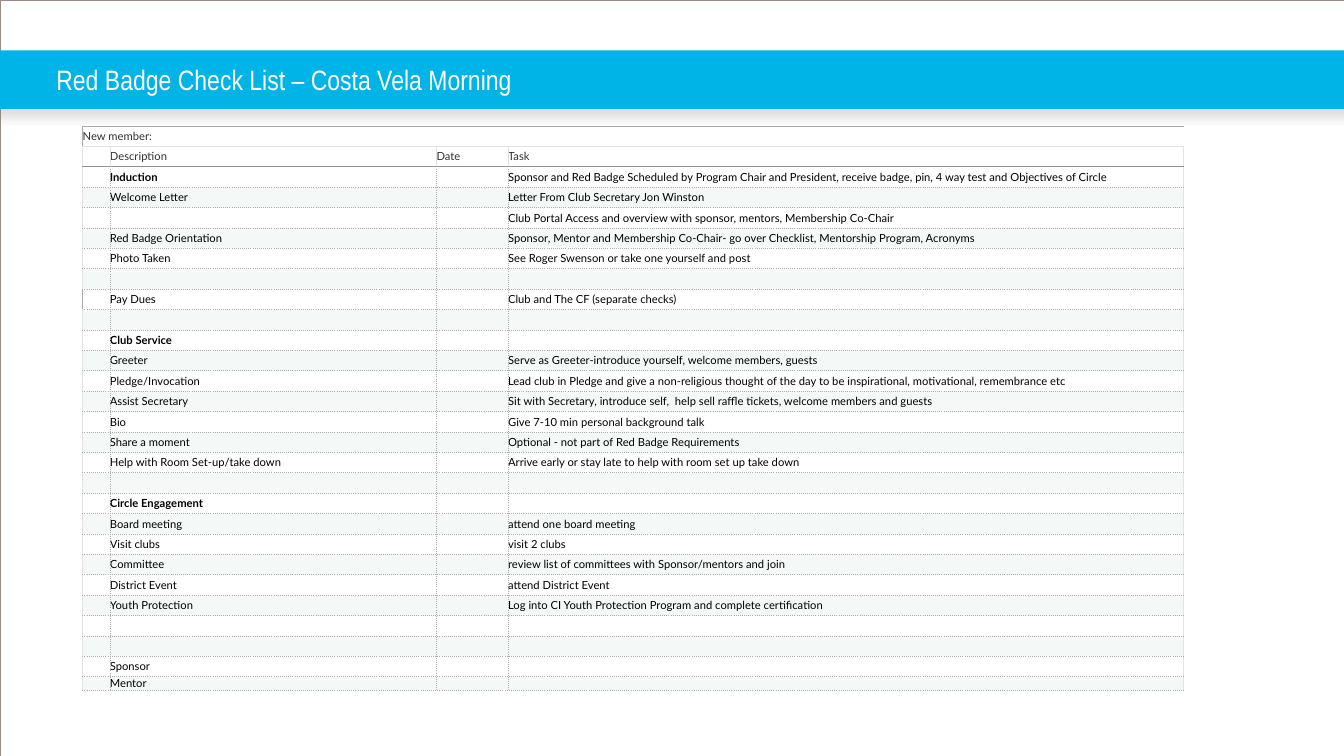
from dataclasses import dataclass

from lxml.etree import SubElement
from pptx import Presentation
from pptx.dml.color import RGBColor
from pptx.enum.shapes import MSO_SHAPE as Shape
from pptx.enum.text import MSO_ANCHOR as Anchor
from pptx.oxml.ns import qn
from pptx.util import Inches, Pt


@dataclass(frozen=True)
class Theme:
    banner: str = "01B4E7"
    frame: str = "958D85"
    shadow: str = "808080"
    white: str = "FFFFFF"
    band: str = "F4F9F7"
    heading: str = "313131"
    body: str = "000000"
    title_font: str = "Arial Narrow"
    table_font: str = "Lato"
    title_size: float = 20
    table_size: float = 8


# Each border is a colour and a dash
PALE = ("E3E3E3", "solid")
GREY = ("AAAAAA", "solid")
DARK = ("929292", "solid")
DOTTED = ("ADADAD", "dot")

COLUMN_WIDTHS = (0.27, 3.24, 0.71, 6.7)
TABLE_HEIGHT = 5.6
LAST_ROW_HEIGHT = 0.13
SECTIONS = ("Induction", "Club Service", "Circle Engagement")

# Description and task of each row
CHECKLIST = (
    ("Induction", "Sponsor and Red Badge Scheduled by Program Chair and President, "
                  "receive badge, pin, 4 way test and Objectives of Circle"),
    ("Welcome Letter", "Letter From Club Secretary Jon Winston"),
    ("", "Club Portal Access and overview with sponsor, mentors, Membership Co-Chair"),
    ("Red Badge Orientation", "Sponsor, Mentor and Membership Co-Chair- go over "
                              "Checklist, Mentorship Program, Acronyms"),
    ("Photo Taken", "See Roger Swenson or take one yourself and post"),
    ("", ""),
    ("Pay Dues", "Club and The CF (separate checks)"),
    ("", ""),
    ("Club Service", ""),
    ("Greeter", "Serve as Greeter-introduce yourself, welcome members, guests"),
    ("Pledge/Invocation", "Lead club in Pledge and give a non-religious thought of the "
                          "day to be inspirational, motivational, remembrance etc"),
    ("Assist Secretary", "Sit with Secretary, introduce self,  help sell raffle tickets, "
                         "welcome members and guests"),
    ("Bio", "Give 7-10 min personal background talk"),
    ("Share a moment", "Optional - not part of Red Badge Requirements"),
    ("Help with Room Set-up/take down",
     "Arrive early or stay late to help with room set up take down"),
    ("", ""),
    ("Circle Engagement", ""),
    ("Board meeting", "attend one board meeting"),
    ("Visit clubs", "visit 2 clubs"),
    ("Committee", "review list of committees with Sponsor/mentors and join"),
    ("District Event", "attend District Event"),
    ("Youth Protection", "Log into CI Youth Protection Program and complete certification"),
    ("", ""),
    ("", ""),
    ("Sponsor", ""),
    ("Mentor", ""),
)


def write_text(frame, text, *, font, size, color, bold=False):
    paragraph = frame.paragraphs[0]
    if not text:
        # An empty cell still needs a type size, or it stretches its row
        SubElement(paragraph._p, qn("a:endParaRPr"), sz=str(int(size * 100)))
        return
    run = paragraph.add_run()
    run.text = text
    run.font.name = font
    run.font.size = Pt(size)
    run.font.bold = bold
    run.font.color.rgb = RGBColor.from_string(color)


def clear_margins(holder):
    holder.margin_left = holder.margin_right = 0
    holder.margin_top = holder.margin_bottom = 0
    holder.vertical_anchor = Anchor.MIDDLE


def set_borders(cell, left, right, top, bottom):
    properties = cell._tc.get_or_add_tcPr()
    for side, border in zip("LRTB", (left, right, top, bottom)):
        line = SubElement(properties, qn(f"a:ln{side}"), w=str(Pt(0.5)))
        if border is None:
            SubElement(line, qn("a:noFill"))
            continue
        color, dash = border
        fill = SubElement(line, qn("a:solidFill"))
        SubElement(fill, qn("a:srgbClr"), val=color)
        SubElement(line, qn("a:prstDash"), val=dash)


def borders_at(row, column, last_column):
    """Return the left, right, top and bottom borders of one cell."""
    if row == 0:
        return GREY if column == 0 else None, None, GREY, PALE
    if row == 1:
        return PALE, PALE, PALE, DARK
    left = PALE if column == 0 else DOTTED
    if column == 0 and CHECKLIST[row - 2][0] == "Pay Dues":
        left = GREY
    right = PALE if column == last_column else DOTTED
    return left, right, DARK if row == 2 else DOTTED, DOTTED


class SlideBuilder:
    def __init__(self, slide, theme):
        self.slide = slide
        self.theme = theme

    def rectangle(self, left, top, width, height, *, fill=None, line=None):
        shape = self.slide.shapes.add_shape(
            Shape.RECTANGLE, Inches(left), Inches(top), Inches(width), Inches(height))
        shape.shadow.inherit = False
        if fill:
            shape.fill.solid()
            shape.fill.fore_color.rgb = RGBColor.from_string(fill)
        else:
            shape.fill.background()
        if line:
            shape.line.color.rgb = RGBColor.from_string(line)
            shape.line.width = Pt(0.13)
        else:
            shape.line.fill.background()
        return shape

    def drop_shadow(self, shape):
        effects = shape._element.spPr.find(qn("a:effectLst"))
        shadow = SubElement(effects, qn("a:outerShdw"), blurRad=str(Pt(7)),
                            dist=str(Pt(4.8)), dir="5400000", rotWithShape="0")
        color = SubElement(shadow, qn("a:srgbClr"), val=self.theme.shadow)
        SubElement(color, qn("a:alpha"), val="25000")

    def title(self, text, left, top, width, height):
        box = self.slide.shapes.add_textbox(
            Inches(left), Inches(top), Inches(width), Inches(height))
        frame = box.text_frame
        frame.word_wrap = True
        clear_margins(frame)
        write_text(frame, text, font=self.theme.title_font,
                   size=self.theme.title_size, color=self.theme.white)

    def checklist(self, rows, left, top):
        theme = self.theme
        shape = self.slide.shapes.add_table(
            len(rows), len(COLUMN_WIDTHS), Inches(left), Inches(top),
            Inches(sum(COLUMN_WIDTHS)), Inches(TABLE_HEIGHT))
        table = shape.table
        table.first_row = table.horz_banding = False
        for column, width in zip(table.columns, COLUMN_WIDTHS):
            column.width = Inches(width)
        row_height = (TABLE_HEIGHT - LAST_ROW_HEIGHT) / (len(rows) - 1)
        for row in table.rows:
            row.height = Inches(row_height)
        table.rows[len(rows) - 1].height = Inches(LAST_ROW_HEIGHT)
        last_column = len(COLUMN_WIDTHS) - 1
        table.cell(0, 0).merge(table.cell(0, last_column))
        for i, texts in enumerate(rows):
            for j, text in enumerate(texts):
                cell = table.cell(i, j)
                clear_margins(cell)
                set_borders(cell, *borders_at(i, j, last_column))
                cell.fill.solid()
                cell.fill.fore_color.rgb = RGBColor.from_string(
                    theme.band if i > 1 and i % 2 else theme.white)
                write_text(cell.text_frame, text, font=theme.table_font,
                           size=theme.table_size, bold=text in SECTIONS,
                           color=theme.heading if i < 2 else theme.body)


def main():
    presentation = Presentation()
    presentation.slide_width = Inches(13.33)
    presentation.slide_height = Inches(7.5)
    theme = Theme()
    builder = SlideBuilder(
        presentation.slides.add_slide(presentation.slide_layouts[6]), theme)
    builder.rectangle(0, 0, 13.33, 7.5, line=theme.frame)
    banner = builder.rectangle(-0.11, 0.5, 13.56, 0.58, fill=theme.banner)
    builder.drop_shadow(banner)
    builder.title("Red Badge Check List – Costa Vela Morning", 0.56, 0.5, 12.77, 0.58)
    rows = [("New member:", "", "", ""), ("", "Description", "Date", "Task")]
    rows += [("", description, "", task) for description, task in CHECKLIST]
    builder.checklist(rows, 0.82, 1.25)
    presentation.save("out.pptx")


if __name__ == "__main__":
    main()
